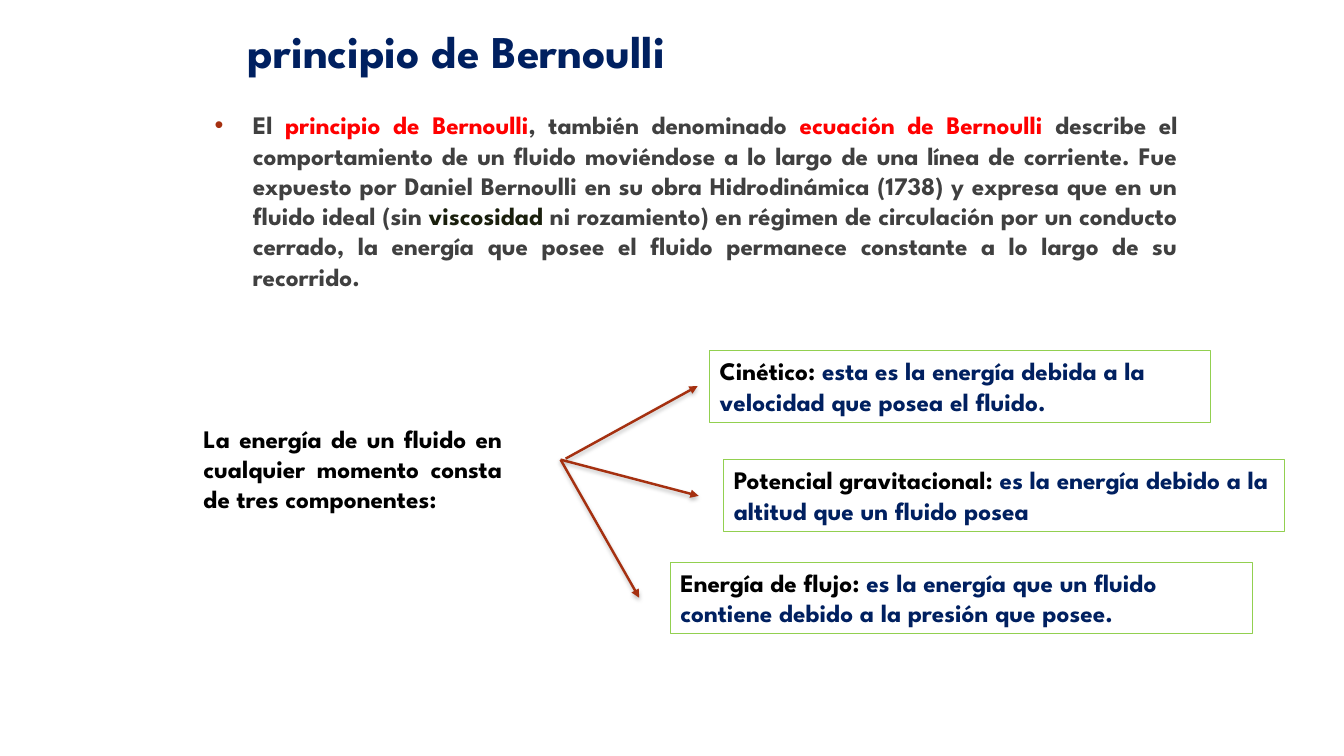
from lxml.etree import SubElement
from pptx import Presentation
from pptx.dml.color import RGBColor
from pptx.enum.shapes import MSO_CONNECTOR, MSO_SHAPE
from pptx.enum.text import MSO_ANCHOR, PP_ALIGN
from pptx.oxml.ns import qn
from pptx.util import Inches, Pt

FONT = "League Spartan"
COLORS = {
    "navy": "002060", "red": "FF0000", "gray": "404040", "olive": "1A1F0D",
    "black": "000000", "rust": "A53010", "green": "92D050",
}
DEFINITION = [
    ("El ", "gray"),
    ("principio de Bernoulli", "red"),
    (", también denominado ", "gray"),
    ("ecuación de Bernoulli ", "red"),
    ("describe el comportamiento de un fluido moviéndose a lo largo de una "
     "línea de corriente. Fue expuesto por Daniel Bernoulli en su obra "
     "Hidrodinámica (1738) y expresa que en un fluido ideal (sin", "gray"),
    (" viscosidad", "olive"),
    (" ni rozamiento) en régimen de circulación por un conducto cerrado, "
     "la energía que posee el fluido permanece constante a lo largo de su "
     "recorrido.", "gray"),
]
INTRO = "La energía de un fluido en cualquier momento consta de tres componentes:"
# term, explanation, box, arrow start, arrow end
COMPONENTS = [
    ("Cinético: ", "esta es la energía debida a la velocidad que posea el fluido.",
     (7.04, 3.48, 4.97, 0.71), (5.61, 4.55), (6.92, 3.83)),
    ("Potencial gravitacional: ", "es la energía debido a la altitud que un fluido posea",
     (7.18, 4.56, 5.56, 0.71), (5.56, 4.56), (6.93, 4.92)),
    ("Energía de flujo: ",
     "es la energía que un fluido contiene debido a la presión que posee.",
     (6.65, 5.58, 5.77, 0.71), (5.56, 4.56), (6.34, 5.93)),
]


def rgb(name):
    return RGBColor.from_string(COLORS[name])


def add_bullet(p, indent, color):
    pPr = p._p.get_or_add_pPr()
    pPr.set("marL", str(Inches(indent)))
    pPr.set("indent", str(-Inches(indent)))
    clr = SubElement(pPr, qn("a:buClr"))
    SubElement(clr, qn("a:srgbClr"), val=COLORS[color])
    SubElement(pPr, qn("a:buFont"), typeface="Arial")
    SubElement(pPr, qn("a:buChar"), char="•")


def write_text(sp, runs, size=18, align=PP_ALIGN.LEFT, bullet=None):
    """Fill a shape with one paragraph of (text, colour) runs."""
    tf = sp.text_frame
    tf.word_wrap = True
    tf.vertical_anchor = MSO_ANCHOR.TOP
    p = tf.paragraphs[0]
    p.alignment = align
    if bullet:
        add_bullet(p, 0.38, bullet)
    for text, color in runs:
        r = p.add_run()
        r.text = text
        r.font.name, r.font.size, r.font.bold = FONT, Pt(size), True
        r.font.color.rgb = rgb(color)


def add_text(s, box, runs, **fmt):
    write_text(s.shapes.add_textbox(*map(Inches, box)), runs, **fmt)


def add_arrow(s, start, end):
    line = s.shapes.add_connector(MSO_CONNECTOR.STRAIGHT, *map(Inches, start + end))
    line.line.color.rgb = rgb("rust")
    line.line.width = Pt(1.75)
    SubElement(line.line._get_or_add_ln(), qn("a:tailEnd"), type="triangle")
    effects = SubElement(line._element.spPr, qn("a:effectLst"))
    shadow = SubElement(effects, qn("a:outerShdw"), blurRad=str(Pt(3)),
                        dist=str(Pt(2)), dir="5400000", rotWithShape="0")
    clr = SubElement(shadow, qn("a:srgbClr"), val=COLORS["black"])
    SubElement(clr, qn("a:alpha"), val="25000")


def add_component(s, term, explanation, box):
    sp = s.shapes.add_shape(MSO_SHAPE.RECTANGLE, *map(Inches, box))
    sp.shadow.inherit = False
    sp.fill.background()
    sp.line.color.rgb = rgb("green")
    sp.line.width = Pt(0.75)
    write_text(sp, [(term, "black"), (explanation, "navy")])


def add_components(s, box):
    """Introductory text in the box, with arrows to the three components."""
    add_text(s, box, [(INTRO, "black")], align=PP_ALIGN.JUSTIFY)
    for term, explanation, component_box, start, end in COMPONENTS:
        add_arrow(s, start, end)
        add_component(s, term, explanation, component_box)


def main():
    prs = Presentation()
    prs.slide_width, prs.slide_height = Inches(13.33), Inches(7.5)
    s = prs.slides.add_slide(prs.slide_layouts[6])
    add_text(s, (2.36, 0.18, 4.95, 0.56), [("principio de Bernoulli", "navy")], size=32.4)
    add_text(s, (2.03, 1.04, 9.75, 2.2), DEFINITION, align=PP_ALIGN.JUSTIFY, bullet="rust")
    add_components(s, (1.92, 4.15, 3.16, 1.31))
    prs.save("out.pptx")


if __name__ == "__main__":
    main()
